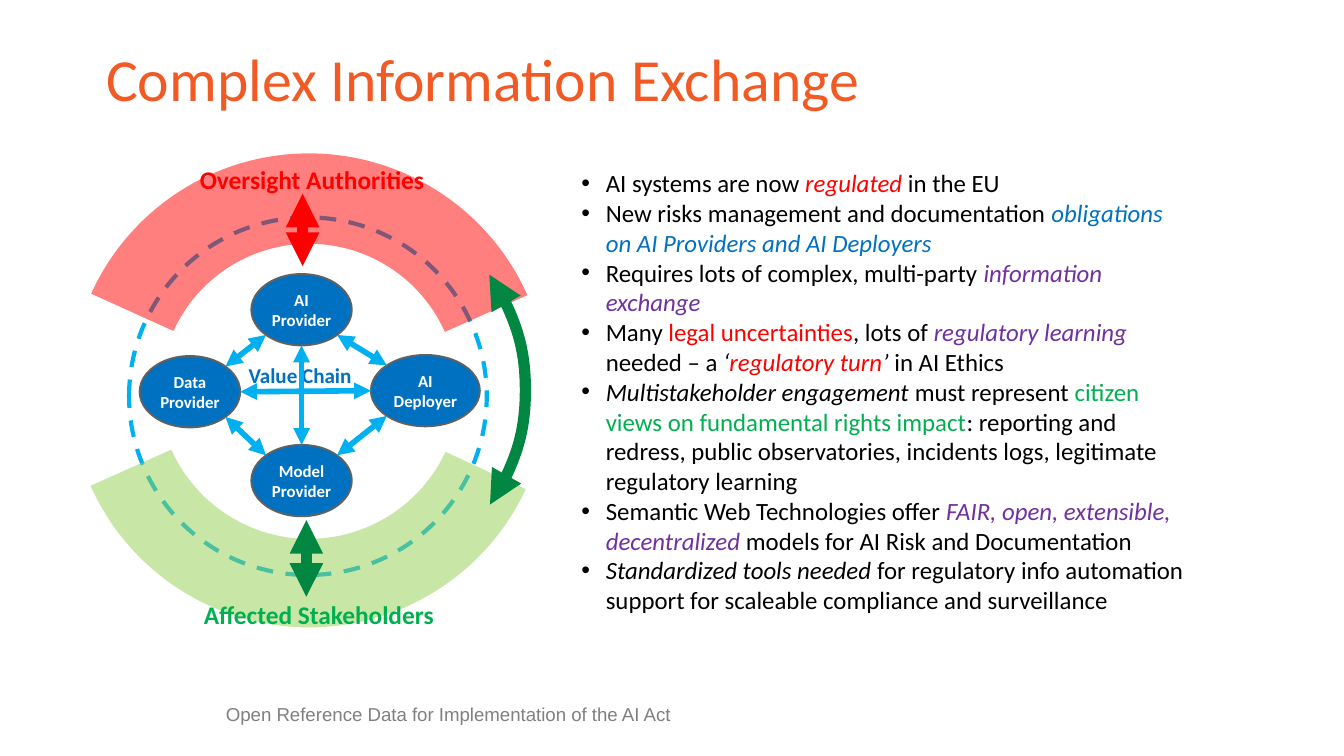
from math import cos, radians, sin

from lxml.etree import SubElement
from pptx import Presentation
from pptx.dml.color import RGBColor
from pptx.enum.dml import MSO_LINE
from pptx.enum.shapes import MSO_CONNECTOR, MSO_SHAPE
from pptx.enum.text import MSO_ANCHOR, PP_ALIGN
from pptx.oxml.ns import qn
from pptx.util import Cm, Pt

COLORS = {
    "orange": "F15A24", "black": "000000", "gray": "808080", "white": "FFFFFF",
    "red": "FF0000", "blue": "0070C0", "sky": "00B0F0", "purple": "7030A0",
    "green": "00B050", "dark_green": "018742", "lime": "92D050", "outline": "616161",
}
RGB = {name: RGBColor.from_string(value) for name, value in COLORS.items()}


def add_run(p, text, color, **fmt):
    r = p.add_run()
    r.text = text
    for key, value in {"name": "Calibri", **fmt}.items():
        setattr(r.font, key, value)
    r.font.color.rgb = RGB[color]


def add_arrowheads(s, color, width):
    s.line.color.rgb = RGB[color]
    s.line.width = Pt(width)
    ln = s.line._get_or_add_ln()
    for end in ("a:headEnd", "a:tailEnd"):
        SubElement(ln, qn(end), type="triangle")
    if s._element.spPr.find(qn("a:effectLst")) is None:
        SubElement(s._element.spPr, qn("a:effectLst"))


prs = Presentation()
prs.slide_width, prs.slide_height = Cm(25.4), Cm(14.29)
slide = prs.slides.add_slide(prs.slide_layouts[5])
shapes = slide.shapes

title = shapes.title
title.left, title.top, title.width, title.height = Cm(1.75), Cm(0.76), Cm(21.9), Cm(1.6)
tf = title.text_frame
tf.vertical_anchor = MSO_ANCHOR.MIDDLE
p = tf.paragraphs[0]
p.alignment = PP_ALIGN.LEFT
p.line_spacing = 0.9
add_run(p, "Complex Information Exchange", "orange", size=Pt(32))

bullets = [
    [("AI systems are now ", "black", False), ("regulated ", "red", True),
     ("in the EU", "black", False)],
    [("New risks management and documentation ", "black", False),
     ("obligations on AI Providers and AI Deployers", "blue", True)],
    [("Requires lots of complex, multi-party ", "black", False),
     ("information exchange", "purple", True)],
    [("Many ", "black", False), ("legal uncertainties", "red", False),
     (", lots of ", "black", False), ("regulatory learning ", "purple", True),
     ("needed – a ", "black", False), ("‘", "black", True),
     ("regulatory turn", "red", True), ("’", "black", True),
     (" in AI Ethics", "black", False)],
    [("Multistakeholder engagement ", "black", True), ("must represent ", "black", False),
     ("citizen views on fundamental rights impact", "green", False),
     (": reporting and redress, public observatories, incidents logs, "
      "legitimate regulatory learning", "black", False)],
    [("Semantic Web Technologies offer ", "black", False),
     ("FAIR, open, extensible, decentralized ", "purple", True),
     ("models for AI Risk and Documentation", "black", False)],
    [("Standardized tools needed ", "black", True),
     ("for regulatory info automation support for scaleable compliance and surveillance",
      "black", False)],
]
tf = shapes.add_textbox(Cm(10.74), Cm(3.05), Cm(12.01), Cm(10.03)).text_frame
tf.word_wrap = True
for i, runs in enumerate(bullets):
    p = tf.paragraphs[0] if i == 0 else tf.add_paragraph()
    pPr = p._p.get_or_add_pPr()
    pPr.set("marL", str(Cm(0.46)))
    pPr.set("indent", str(-Cm(0.46)))
    SubElement(SubElement(pPr, qn("a:buClr")), qn("a:srgbClr"), val=COLORS["black"])
    SubElement(pPr, qn("a:buFont"), typeface="Arial")
    SubElement(pPr, qn("a:buChar"), char="•")
    for text, color, italic in runs:
        add_run(p, text, color, size=Pt(13.3), italic=italic)

tf = shapes.add_textbox(Cm(4.27), Cm(13.08), Cm(10.13), Cm(0.64)).text_frame
tf.word_wrap = True
tf.vertical_anchor = MSO_ANCHOR.BOTTOM
tf.margin_left = tf.margin_right = tf.margin_top = tf.margin_bottom = 0
p = tf.paragraphs[0]
p.line_spacing = 0.9
add_run(p, "Open Reference Data for Implementation of the AI Act", "gray",
        name="Arial", size=Pt(10))

ring = shapes.add_shape(MSO_SHAPE.OVAL, Cm(2.44), Cm(4.11), Cm(6.76), Cm(6.76))
ring.shadow.inherit = False
ring.fill.background()
ring.line.color.rgb = RGB["sky"]
ring.line.width = Pt(2.25)
ring.line.dash_style = MSO_LINE.DASH

tf = shapes.add_textbox(Cm(4.45), Cm(6.73), Cm(2.51), Cm(0.74)).text_frame
tf.word_wrap = False
add_run(tf.paragraphs[0], "Value Chain", "blue", size=Pt(11.3), bold=True)

actors = {
    "Model Provider": (4.75, 8.41, 1.9, 1.35),
    "Data Provider": (2.64, 6.73, 1.9, 1.35),
    "AI Provider": (4.75, 5.18, 1.9, 1.35),
    "AI Deployer": (7.01, 6.71, 2.06, 1.35),
}
for name, box in actors.items():
    s = shapes.add_shape(MSO_SHAPE.OVAL, *map(Cm, box))
    s.shadow.inherit = False
    s.fill.solid()
    s.fill.fore_color.rgb = RGB["blue"]
    s.line.color.rgb = RGB["outline"]
    s.line.width = Pt(1)
    tf = s.text_frame
    tf.word_wrap = True
    tf.vertical_anchor = MSO_ANCHOR.MIDDLE
    tf.margin_left = tf.margin_right = tf.margin_top = tf.margin_bottom = 0
    p = tf.paragraphs[0]
    p.alignment = PP_ALIGN.CENTER
    add_run(p, name, "white", size=Pt(9), bold=True)

exchanges = [
    ("Data Provider", -45, "AI Provider", 135),
    ("Data Provider", 0, "AI Deployer", 180),
    ("Data Provider", 45, "Model Provider", 225),
    ("Model Provider", -90, "AI Provider", 90),
    ("Model Provider", -45, "AI Deployer", 135),
    ("AI Provider", 45, "AI Deployer", 225),
]
for start, start_angle, end, end_angle in exchanges:
    points = []
    for name, angle in ((start, start_angle), (end, end_angle)):
        x, y, w, h = actors[name]
        points += [Cm(x + w / 2 * (1 + cos(radians(angle)))),
                   Cm(y + h / 2 * (1 + sin(radians(angle))))]
    add_arrowheads(shapes.add_connector(MSO_CONNECTOR.STRAIGHT, *points), "sky", 3)

groups = [
    ("Oversight Authorities", "red", "red", "red", 2.9, (122.644, 201.593, 0.189), False,
     (5.72, 3.66, 5.03), (3.48, 2.97, 4.83)),
    ("Affected Stakeholders", "green", "lime", "dark_green", 2.82,
     (122.438, 201.022, 0.185), True, (5.79, 11.28, 9.83), (3.56, 11.2, 4.93)),
]
for name, color, band, arrow, top, adjustments, flipped, (x, y1, y2), label in groups:
    s = shapes.add_shape(MSO_SHAPE.BLOCK_ARC, Cm(1.32), Cm(top), Cm(9.04), Cm(9.04))
    for i, value in enumerate(adjustments):
        s.adjustments[i] = value
    if flipped:
        s._element.spPr.xfrm.set("flipV", "1")
    s.shadow.inherit = False
    s.fill.solid()
    s.fill.fore_color.rgb = RGB[band]
    SubElement(s._element.spPr.find(".//" + qn("a:srgbClr")), qn("a:alpha"), val="50000")
    s.line.fill.background()
    add_arrowheads(shapes.add_connector(MSO_CONNECTOR.STRAIGHT, Cm(x), Cm(y1), Cm(x), Cm(y2)),
                   arrow, 6)
    left, label_top, width = label
    tf = shapes.add_textbox(Cm(left), Cm(label_top), Cm(width), Cm(0.84)).text_frame
    tf.word_wrap = False
    p = tf.paragraphs[0]
    p.alignment = PP_ALIGN.CENTER
    add_run(p, name, color, size=Pt(13.6), bold=True)

arc = shapes.add_shape(MSO_SHAPE.ARC, Cm(1.85), Cm(3.45), Cm(8.08), Cm(7.85))
arc.adjustments[0], arc.adjustments[1] = 196.209, 19.615
arc.shadow.inherit = False
arc.fill.background()
add_arrowheads(arc, "dark_green", 6)

prs.save("out.pptx")
